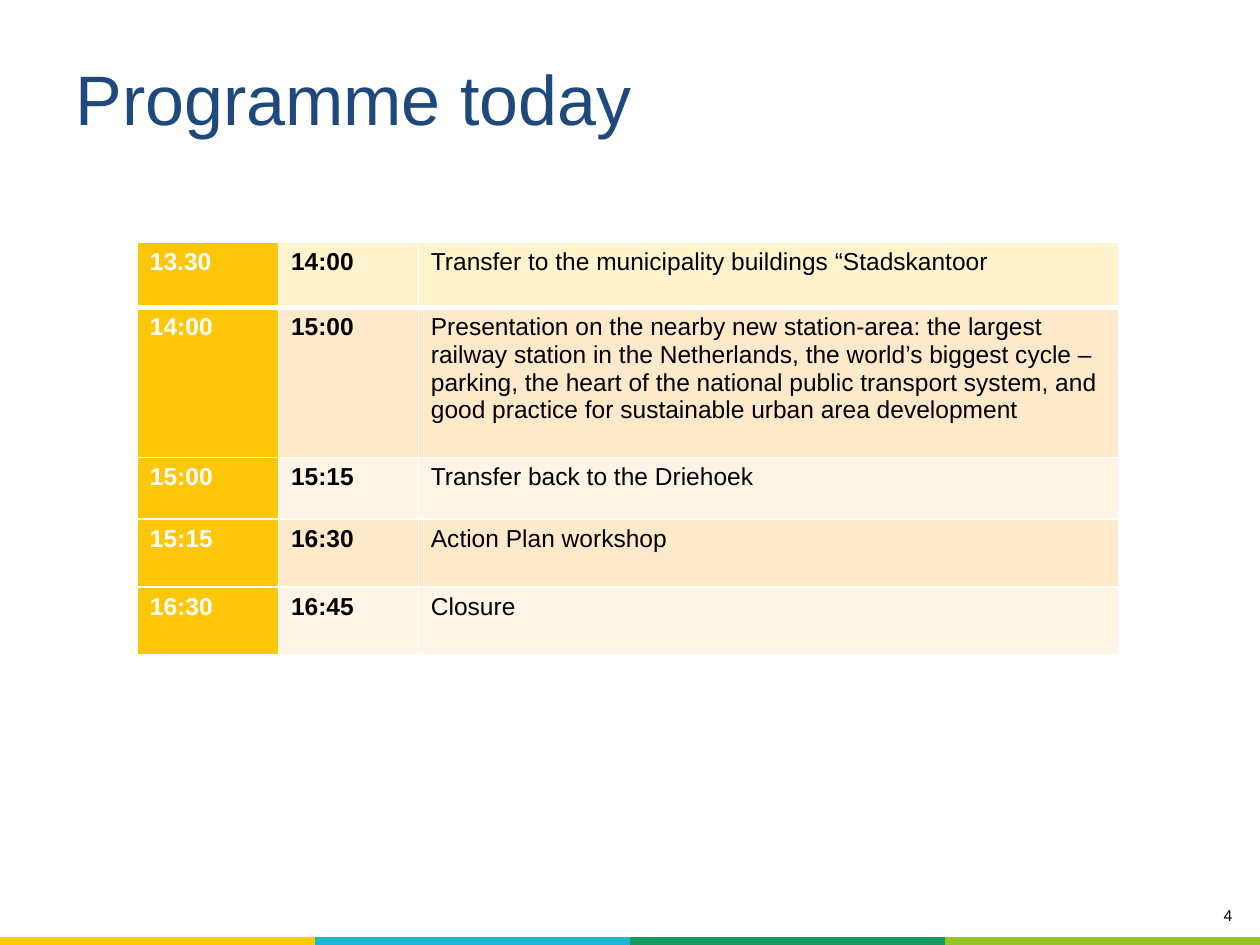
from lxml.etree import SubElement
from pptx import Presentation
from pptx.dml.color import RGBColor
from pptx.enum.text import MSO_ANCHOR, MSO_AUTO_SIZE, PP_ALIGN
from pptx.oxml.ns import qn
from pptx.util import Inches, Pt

WHITE = RGBColor(0xFF, 0xFF, 0xFF)
BLACK = RGBColor(0, 0, 0)
NAVY = RGBColor(0x1F, 0x49, 0x7D)
GOLD = RGBColor(0xFD, 0xC6, 0x09)
CREAM = RGBColor(0xFF, 0xF4, 0xCE)
PEACH = RGBColor(0xFE, 0xEA, 0xCA)
IVORY = RGBColor(0xFF, 0xF5, 0xE6)
STRIP = [RGBColor(0xFF, 0xCC, 0x00), RGBColor(0x1C, 0xB8, 0xCF),
         RGBColor(0x15, 0x99, 0x61), RGBColor(0x98, 0xC2, 0x22)]

PROGRAMME = [
    ("13.30", "14:00", "Transfer to the municipality buildings “Stadskantoor", 0.52, CREAM),
    ("14:00", "15:00", "Presentation on the nearby new station-area: the largest railway "
     "station in the Netherlands, the world’s biggest cycle –parking, the heart of the "
     "national public transport system, and good practice for sustainable urban area "
     "development", 1.19, PEACH),
    ("15:00", "15:15", "Transfer back to the Driehoek", 0.49, IVORY),
    ("15:15", "16:30", "Action Plan workshop", 0.54, PEACH),
    ("16:30", "16:45", "Closure", 0.54, IVORY),
]


def style_run(p, size, color, bold=False):
    f = p.runs[0].font
    f.name, f.size, f.bold = "Arial", Pt(size), bold
    f.color.rgb = color


def add_plain_table(rows, widths, x, y, height):
    sp = slide.shapes.add_table(rows, len(widths), Inches(x), Inches(y),
                                Inches(sum(widths)), Inches(height))
    tbl = sp.table
    tbl.first_row = tbl.horz_banding = False
    for col, width in zip(tbl.columns, widths):
        col.width = Inches(width)
    return tbl


prs = Presentation()
prs.slide_width, prs.slide_height = Inches(10), Inches(7.5)
slide = prs.slides.add_slide(prs.slide_layouts[5])

strip = add_plain_table(1, [2.5] * 4, 0, 7.44, 0.17)
for cell, color in zip(strip.rows[0].cells, STRIP):
    cell.fill.solid()
    cell.fill.fore_color.rgb = color
    for side in ("lnL", "lnR", "lnT", "lnB"):
        ln = SubElement(cell._tc.tcPr, qn(f"a:{side}"), w="0")
        SubElement(ln, qn("a:noFill"))
        cell._tc.tcPr.insert(0, ln)

sp = slide.shapes.add_textbox(Inches(7.91), Inches(7.14), Inches(1.97), Inches(0.31))
tf = sp.text_frame
tf.word_wrap = True
tf.text = "4"
tf.paragraphs[0].alignment = PP_ALIGN.RIGHT
style_run(tf.paragraphs[0], 9, BLACK)

title = slide.shapes.title
title.left, title.top = Inches(0.5), Inches(0.47)
title.width, title.height = Inches(9), Inches(0.61)
tf = title.text_frame
tf.text = "Programme today"
tf.auto_size = MSO_AUTO_SIZE.NONE
tf.vertical_anchor = MSO_ANCHOR.MIDDLE
tf.margin_left = tf.margin_right = tf.margin_top = tf.margin_bottom = Inches(0.1)
tf.paragraphs[0].alignment = PP_ALIGN.LEFT
style_run(tf.paragraphs[0], 40, NAVY)

heights = [row[3] for row in PROGRAMME]
tbl = add_plain_table(len(PROGRAMME), [1.12, 1.11, 5.56], 1.09, 1.92, sum(heights))
for i, (start, end, activity, height, band) in enumerate(PROGRAMME):
    tbl.rows[i].height = Inches(height)
    for j, text in enumerate((start, end, activity)):
        cell = tbl.cell(i, j)
        cell.text = text
        style_run(cell.text_frame.paragraphs[0], 14, WHITE if j == 0 else BLACK, j < 2)
        cell.fill.solid()
        cell.fill.fore_color.rgb = GOLD if j == 0 else band
        for k, side in enumerate(("lnL", "lnR", "lnT", "lnB")):
            thick = (i, side) in ((0, "lnB"), (1, "lnT"))
            ln = SubElement(cell._tc.tcPr, qn(f"a:{side}"), w=str(Pt(3 if thick else 1)))
            fill = SubElement(ln, qn("a:solidFill"))
            SubElement(fill, qn("a:srgbClr"), val=str(WHITE))
            cell._tc.tcPr.insert(k, ln)

prs.save("out.pptx")
